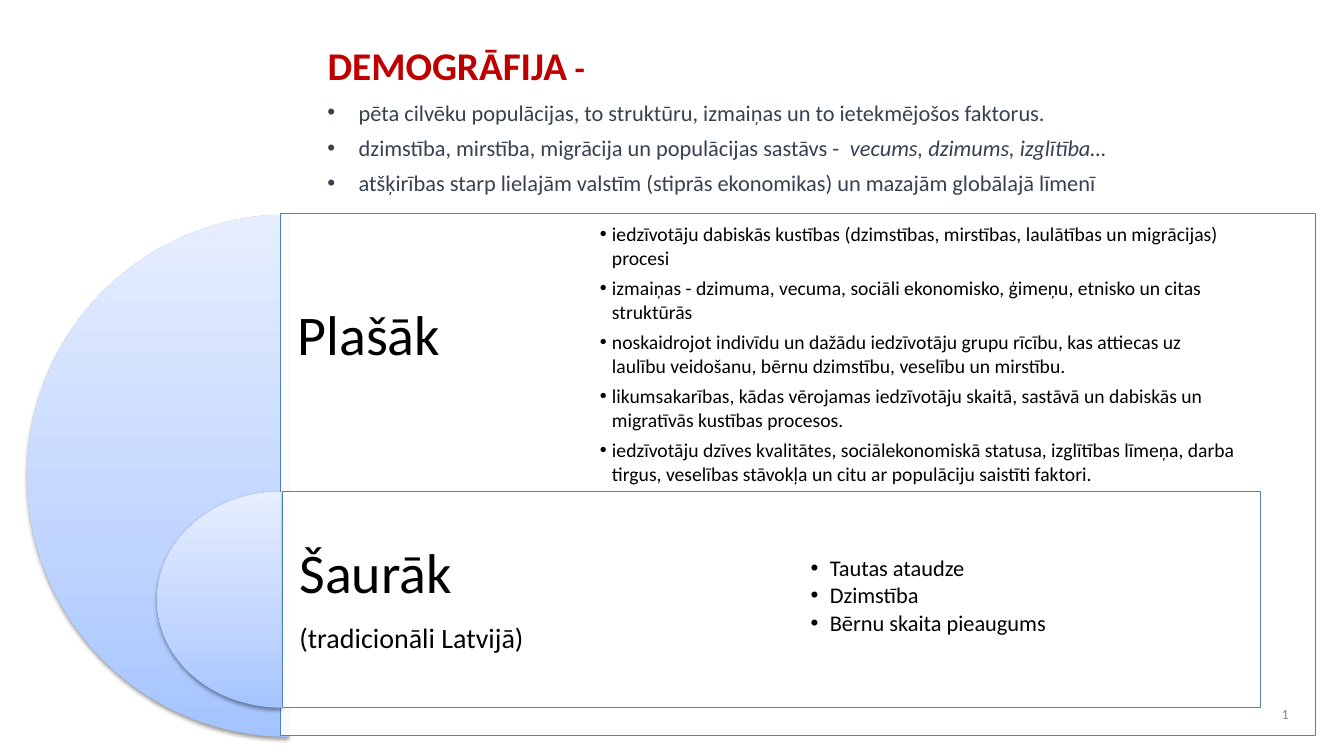
import pptx
import pptx.util
import pptx.oxml
import pptx.oxml.ns
import pptx.dml.color
import pptx.enum.shapes
import pptx.enum.text
import lxml.etree

WIDE, HIGH = 13.33, 7.5
IN, PT = pptx.util.Inches, pptx.util.Pt
SHAPE = pptx.enum.shapes.MSO_SHAPE
MID = pptx.enum.text.MSO_ANCHOR.MIDDLE
RIGHT = pptx.enum.text.PP_ALIGN.RIGHT


class Theme:
    font = "Calibri"
    red, slate, black, grey = "C00000", "374151", "000000", "898989"
    white, line = "FFFFFF", "4F81BD"
    stops = [(0, "A4C4FF"), (35, "BFD4FF"), (100, "E6EEFF")]
    title, dash, label, sub = 28, 24, 40, 20
    lead, dense, page = 16, 14, 10


# Text is a list of paragraphs, each a list of (words, format) runs
LEAD = [
    [("pēta cilvēku populācijas, to struktūru, izmaiņas un to ietekmējošos faktorus.", {})],
    [("dzimstība, mirstība, migrācija un populācijas sastāvs -  ", {}),
     ("vecums, dzimums, izglītība…", {"italic": True})],
    [("atšķirības starp lielajām valstīm (stiprās ekonomikas) un mazajām globālajā līmenī", {})],
]
BROAD = [[(words, {})] for words in (
    "iedzīvotāju dabiskās kustības (dzimstības, mirstības, laulātības un migrācijas) procesi",
    "izmaiņas - dzimuma, vecuma, sociāli ekonomisko, ģimeņu, etnisko un citas struktūrās",
    "noskaidrojot indivīdu un dažādu iedzīvotāju grupu rīcību, kas attiecas uz laulību "
    "veidošanu, bērnu dzimstību, veselību un mirstību.",
    "likumsakarības, kādas vērojamas iedzīvotāju skaitā, sastāvā un dabiskās un "
    "migratīvās kustības procesos.",
    "iedzīvotāju dzīves kvalitātes, sociālekonomiskā statusa, izglītības līmeņa, darba "
    "tirgus, veselības stāvokļa un citu ar populāciju saistīti faktori.",
)]
CLOSE = [[(words, {})] for words in
         ("Tautas ataudze", "Dzimstība", "Bērnu skaita pieaugums")]


def rgb(code):
    return pptx.dml.color.RGBColor.from_string(code)


def put(item, vals):
    for name, val in vals.items():
        setattr(item, name, val)


def node(tag, **vals):
    item = pptx.oxml.parse_xml(f"<a:{tag} {pptx.oxml.ns.nsdecls('a')}/>")
    for name, val in vals.items():
        item.set(name, str(val))
    return item


def area(left, top, width, height):
    """Turn percent shares of the slide into lengths."""
    return [IN(share * side / 100) for share, side in
            ((left, WIDE), (top, HIGH), (width, WIDE), (height, HIGH))]


def text(slide, box, paras, size, tint, pad=None, anchor=None, dot=None, para=None):
    """Add a text box; dot is the hanging indent of its bullets."""
    frame = slide.shapes.add_textbox(*area(*box)).text_frame
    frame.word_wrap = True
    if anchor:
        frame.vertical_anchor = anchor
    if pad:
        put(frame, {f"margin_{side}": IN(pad)
                    for side in ("left", "top", "right", "bottom")})
    for rank, runs in enumerate(paras):
        item = frame.add_paragraph() if rank else frame.paragraphs[0]
        if dot:
            props = item._p.get_or_add_pPr()
            props.set("marL", str(IN(dot)))
            props.set("indent", str(-IN(dot)))
            props.append(node("buFont", typeface="Arial"))
            props.append(node("buChar", char="•"))
        put(item, para or {})
        if not rank:
            item.space_before = PT(0)
        for words, form in runs:
            run = item.add_run()
            run.text = words
            put(run.font, {"name": Theme.font, "size": PT(size), **form})
            run.font.color.rgb = rgb(tint)
    return frame


def half(slide, box):
    """Add a left half disc with a gradient and a soft shadow."""
    disc = slide.shapes.add_shape(SHAPE.PIE, *area(*box))
    disc.adjustments[0], disc.adjustments[1] = 54, 162
    disc.line.fill.background()
    disc.fill.gradient()
    disc.fill.gradient_angle = 90
    props = disc._element.spPr
    stops = props.find(".//" + pptx.oxml.ns.qn("a:gsLst"))
    for old in list(stops):
        stops.remove(old)
    for place, code in Theme.stops:
        stop = node("gs", pos=place * 1000)
        stop.append(node("srgbClr", val=code))
        stops.append(stop)
    disc.shadow.inherit = False
    cast = node("outerShdw", blurRad=PT(3.15), dist=PT(1.57), dir=5400000, rotWithShape=0)
    tone = node("srgbClr", val=Theme.black)
    tone.append(node("alpha", val=38000))
    cast.append(tone)
    props.find(pptx.oxml.ns.qn("a:effectLst")).append(cast)


def panel(slide, box):
    """Add a slightly clear white panel with a thin edge."""
    pane = slide.shapes.add_shape(SHAPE.RECTANGLE, *area(*box))
    pane.shadow.inherit = False
    pane.fill.solid()
    pane.fill.fore_color.rgb = rgb(Theme.white)
    tone = pane._element.spPr.find(
        pptx.oxml.ns.qn("a:solidFill") + "/" + pptx.oxml.ns.qn("a:srgbClr"))
    tone.append(node("alpha", val=90000))
    pane.line.color.rgb = rgb(Theme.line)
    pane.line.width = PT(0.75)


def label(slide, box, paras):
    text(slide, box, paras, Theme.label, Theme.black, pad=0.17, anchor=MID,
         para={"line_spacing": 0.9, "space_after": PT(14)})


def number(slide, box):
    """Add the slide number as a live field."""
    frame = text(slide, box, [[("2", {})]], Theme.page, Theme.grey,
                 anchor=MID, para={"alignment": RIGHT})
    field = frame.paragraphs[0].runs[0]._r
    field.tag = pptx.oxml.ns.qn("a:fld")
    field.set("id", "{B6F15528-21DE-4FAA-801E-634DDDAF4B2B}")
    field.set("type", "slidenum")


def main():
    deck = pptx.Presentation()
    put(deck, {"slide_width": IN(WIDE), "slide_height": IN(HIGH)})
    slide = deck.slides.add_slide(deck.slide_layouts[6])

    # Heading
    text(slide, (23.63, 4.8, 50, 15.07),
         [[("DEMOGRĀFIJA", {"bold": True}),
           (" -", {"bold": True, "size": PT(Theme.dash)})]], Theme.title, Theme.red)

    # Broad sense: outer disc and panel
    half(slide, (2.03, 28.4, 38.86, 69.07))
    panel(slide, (20.86, 28.27, 77.04, 69.07))
    label(slide, (20.86, 28.27, 38.56, 32.8), [[("Plašāk", {})]])

    # Narrow sense: inner disc and panel
    half(slide, (11.7, 65.07, 18.45, 28.53))
    panel(slide, (21, 65.07, 72.77, 28.53))
    label(slide, (21, 65.07, 36.38, 28.53),
          [[("Šaurāk", {})], [("(tradicionāli Latvijā)", {"size": PT(Theme.sub)})]])

    # Lists in the panels
    text(slide, (42.61, 29.2, 51.39, 35.2), BROAD, Theme.dense, Theme.black,
         pad=0.27, anchor=MID, dot=0.12, para={"space_after": PT(5)})
    text(slide, (58.29, 62.53, 36.38, 32.8), CLOSE, Theme.lead, Theme.black,
         pad=0.27, anchor=MID, dot=0.19,
         para={"line_spacing": 0.9, "space_after": PT(2.4)})

    # Slide number and lead list
    number(slide, (93.32, 92.27, 3.3, 4.4))
    text(slide, (23.63, 12.4, 63.92, 14.4), LEAD, Theme.lead, Theme.slate,
         dot=0.31, para={"space_before": PT(6)})
    deck.save("out.pptx")


if __name__ == "__main__":
    main()
